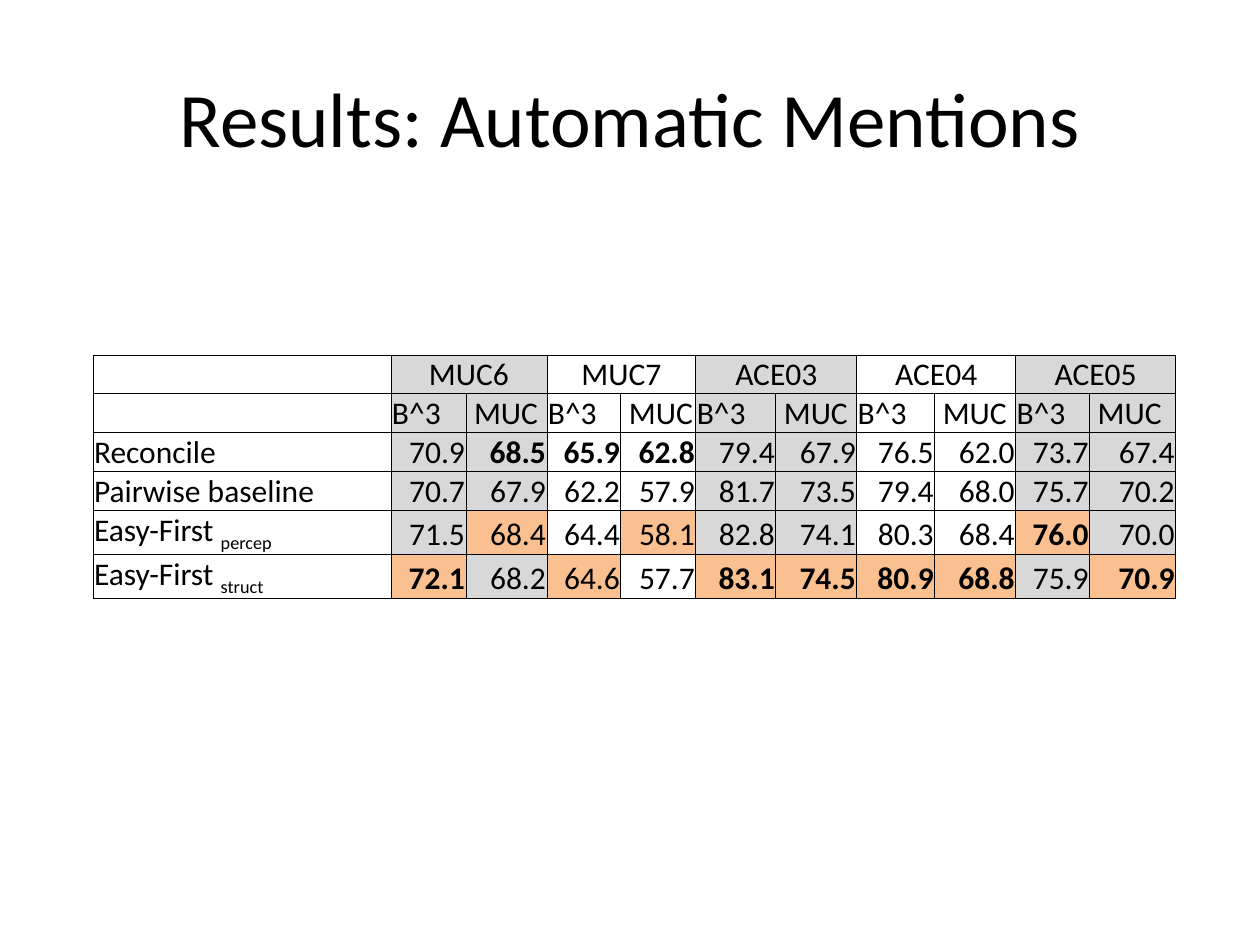
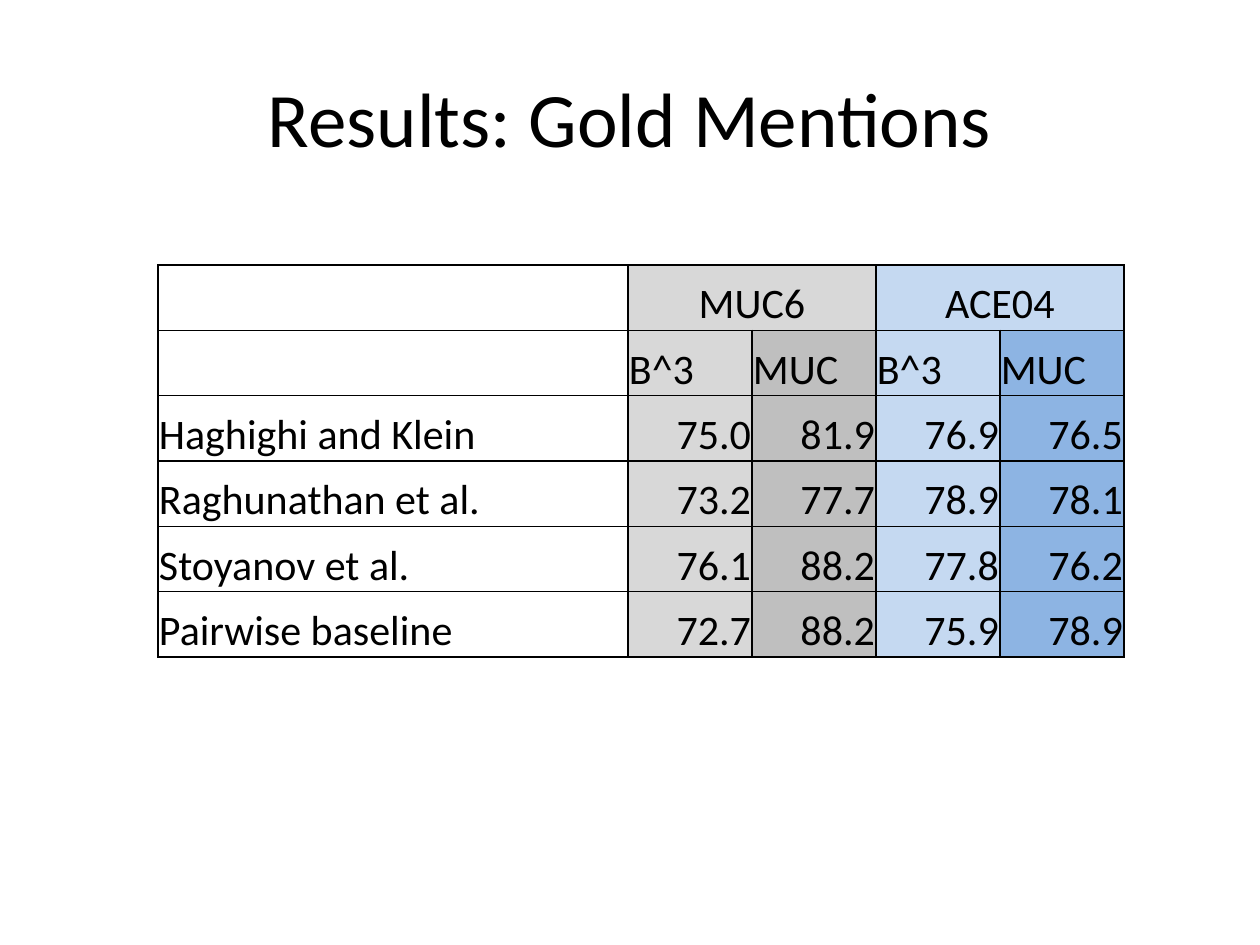
"""Build two slides of coreference results, each a title over a score table."""
from lxml.etree import SubElement
from pptx import Presentation
from pptx.dml.color import RGBColor
from pptx.enum.text import MSO_ANCHOR, PP_ALIGN
from pptx.oxml.ns import qn
from pptx.util import Pt

PX = 914400 / 126
FONT = "Calibri"
BLACK, GREY, DARK_GREY = "000000", "D8D8D8", "BFBFBF"
BLUE, DARK_BLUE, ORANGE = "C5D9F1", "8DB4E3", "FAC090"
TITLE_BOX = (63, 38, 1134, 157)

SLIDES = [
    {
        "title": "Results: Automatic Mentions",
        "groups": ["MUC6", "MUC7", "ACE03", "ACE04", "ACE05"],
        "metrics": ["B^3", " MUC"],
        "rows": [
            ("Reconcile", "", "70.9 68.5 65.9 62.8 79.4 67.9 76.5 62.0 73.7 67.4"),
            ("Pairwise baseline", "", "70.7 67.9 62.2 57.9 81.7 73.5 79.4 68.0 75.7 70.2"),
            ("Easy-First ", "percep", "71.5 68.4 64.4 58.1 82.8 74.1 80.3 68.4 76.0 70.0"),
            ("Easy-First ", "struct", "72.1 68.2 64.6 57.7 83.1 74.5 80.9 68.8 75.9 70.9"),
        ],
        "mark_best": True,
        "fills": [GREY, GREY, None, None],
        "origin": (93, 355),
        "widths": [298, 75, 81, 74, 75, 80, 81, 78, 81, 74, 86],
        "height": 222,
        "size": 18,
        "border": 0.5,
    },
    {
        "title": "Results: Gold Mentions",
        "groups": ["MUC6", "ACE04"],
        "metrics": ["B^3", "MUC"],
        "rows": [
            ("Haghighi and Klein", "", "75.0 81.9 76.9 76.5"),
            ("Raghunathan et al.", "", "73.2 77.7 78.9 78.1"),
            ("Stoyanov et al.", "", "76.1 88.2 77.8 76.2"),
            ("Pairwise baseline", "", "72.7 88.2 75.9 78.9"),
        ],
        "mark_best": False,
        "fills": [GREY, DARK_GREY, BLUE, DARK_BLUE],
        "origin": (158, 265),
        "widths": [470] + [124] * 4,
        "height": 392,
        "size": 24,
        "border": 1,
    },
]


def px(n):
    return round(n * PX)


def rgb(color):
    return RGBColor.from_string(color)


def style(p, size, align, bold=False):
    p.alignment = align
    p.font.name, p.font.size, p.font.bold = FONT, Pt(size), bold
    p.font.color.rgb = rgb(BLACK)


def add_title(s, text):
    tf = s.shapes.add_textbox(*map(px, TITLE_BOX)).text_frame
    tf.word_wrap = True
    tf.vertical_anchor = MSO_ANCHOR.MIDDLE
    tf.text = text
    style(tf.paragraphs[0], 44, PP_ALIGN.CENTER)


def add_borders(cell, width):
    tc_pr = cell._tc.get_or_add_tcPr()
    for side in ("lnL", "lnR", "lnT", "lnB"):
        ln = SubElement(tc_pr, qn(f"a:{side}"), w=str(Pt(width)))
        fill = SubElement(ln, qn("a:solidFill"))
        SubElement(fill, qn("a:srgbClr"), val=BLACK)


def fill_cell(cell, data, text="", align=PP_ALIGN.LEFT, fill=None, bold=False, sub=""):
    add_borders(cell, data["border"])
    cell.margin_left = cell.margin_right = cell.margin_top = px(1)
    cell.margin_bottom = 0
    cell.vertical_anchor = MSO_ANCHOR.BOTTOM
    if fill:
        cell.fill.solid()
        cell.fill.fore_color.rgb = rgb(fill)
    else:
        cell.fill.background()
    p = cell.text_frame.paragraphs[0]
    style(p, data["size"], align, bold)
    if text:
        p.add_run().text = text
    if sub:
        r = p.add_run()
        r.text = sub
        r.font._element.set("baseline", "-25000")


def add_scores(s, data):
    rows, widths, fills = data["rows"], data["widths"], data["fills"]
    n_rows = len(rows) + 2
    table = s.shapes.add_table(n_rows, len(widths), *map(px, data["origin"]),
                               px(sum(widths)), px(data["height"])).table
    table.first_row = table.horz_banding = False
    for column, width in zip(table.columns, widths):
        column.width = px(width)
    for row in table.rows:
        row.height = px(data["height"] / n_rows)

    fill_cell(table.cell(0, 0), data)
    fill_cell(table.cell(1, 0), data)
    for i, (label, sub, _) in enumerate(rows, 2):
        fill_cell(table.cell(i, 0), data, label, sub=sub)

    for j, column in enumerate(zip(*(scores.split() for _, _, scores in rows))):
        fill = fills[j % len(fills)]
        group = "" if j % 2 else data["groups"][j // 2]
        fill_cell(table.cell(0, j + 1), data, group, PP_ALIGN.CENTER, fills[(j - j % 2) % len(fills)])
        fill_cell(table.cell(1, j + 1), data, data["metrics"][j % 2], fill=fill)
        best = max(column)
        best_easy = max((v for v, row in zip(column, rows) if row[1]), default=None)
        for i, value in enumerate(column):
            top = data["mark_best"] and value == best
            marked = rows[i][1] and value == best_easy
            fill_cell(table.cell(i + 2, j + 1), data, value, PP_ALIGN.RIGHT,
                      ORANGE if marked else fill, top)
    for j in range(1, len(widths), 2):
        table.cell(0, j).merge(table.cell(0, j + 1))


def main():
    prs = Presentation()
    prs.slide_width, prs.slide_height = px(1260), px(945)
    for data in SLIDES:
        s = prs.slides.add_slide(prs.slide_layouts[6])
        add_title(s, data["title"])
        add_scores(s, data)
    prs.save("out.pptx")


if __name__ == "__main__":
    main()
